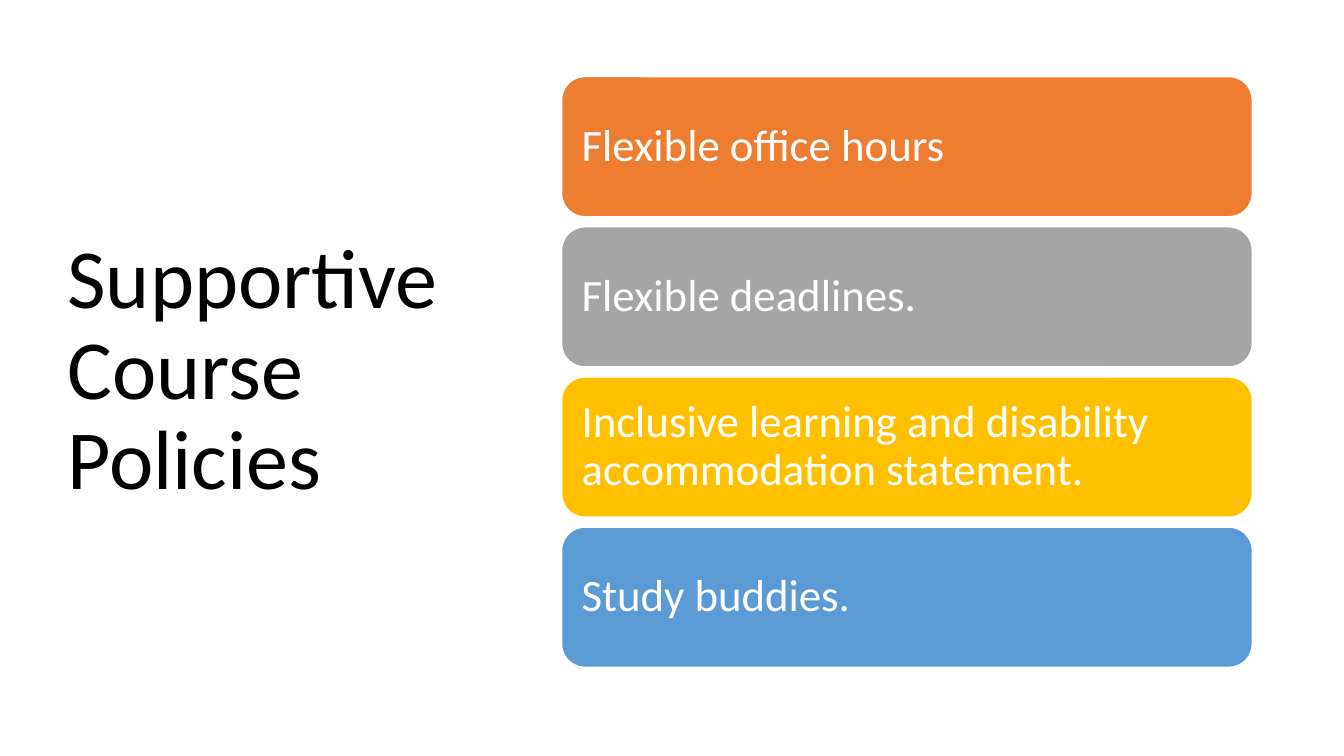
import pptx
import pptx.util
import pptx.dml.color
import pptx.enum.shapes
import pptx.enum.text

Inches = pptx.util.Inches
Pt = pptx.util.Pt
RGBColor = pptx.dml.color.RGBColor

BLACK = RGBColor(0x00, 0x00, 0x00)
WHITE = RGBColor(0xFF, 0xFF, 0xFF)
ORANGE = RGBColor(0xED, 0x7D, 0x31)
GRAY = RGBColor(0xA5, 0xA5, 0xA5)
GOLD = RGBColor(0xFF, 0xC0, 0x00)
BLUE = RGBColor(0x5B, 0x9B, 0xD5)

POLICIES = [
    ("Flexible office hours", ORANGE),
    ("Flexible deadlines.", GRAY),
    ("Inclusive learning and disability accommodation statement.", GOLD),
    ("Study buddies.", BLUE),
]
CARD_TOP = 0.76
CARD_PITCH = 1.49


def write_text(tf, text, size, color):
    tf.word_wrap = True
    tf.vertical_anchor = pptx.enum.text.MSO_ANCHOR.MIDDLE
    p = tf.paragraphs[0]
    p.alignment = pptx.enum.text.PP_ALIGN.LEFT
    p.line_spacing = 0.9
    r = p.add_run()
    r.text = text
    r.font.name = "Calibri"
    r.font.size = Pt(size)
    r.font.color.rgb = color


def add_title(s, text):
    sp = s.shapes.add_textbox(Inches(0.57), Inches(0.68), Inches(4.16), Inches(6.02))
    write_text(sp.text_frame, text, 60, BLACK)


def add_policy_card(s, top, text, fill):
    sp = s.shapes.add_shape(
        pptx.enum.shapes.MSO_SHAPE.ROUNDED_RECTANGLE,
        Inches(5.57), Inches(top), Inches(6.85), Inches(1.39))
    sp.shadow.inherit = False
    sp.fill.solid()
    sp.fill.fore_color.rgb = fill
    sp.line.color.rgb = WHITE
    sp.line.width = Pt(1)
    tf = sp.text_frame
    tf.margin_left = tf.margin_right = Inches(0.13)
    tf.margin_top = tf.margin_bottom = Inches(0.13)
    write_text(tf, text, 32, WHITE)


def main():
    prs = pptx.Presentation()
    prs.slide_width = Inches(13.33)
    prs.slide_height = Inches(7.5)
    s = prs.slides.add_slide(prs.slide_layouts[6])
    add_title(s, "Supportive Course Policies")
    for i, (text, fill) in enumerate(POLICIES):
        add_policy_card(s, CARD_TOP + i * CARD_PITCH, text, fill)
    prs.save("out.pptx")


if __name__ == "__main__":
    main()
